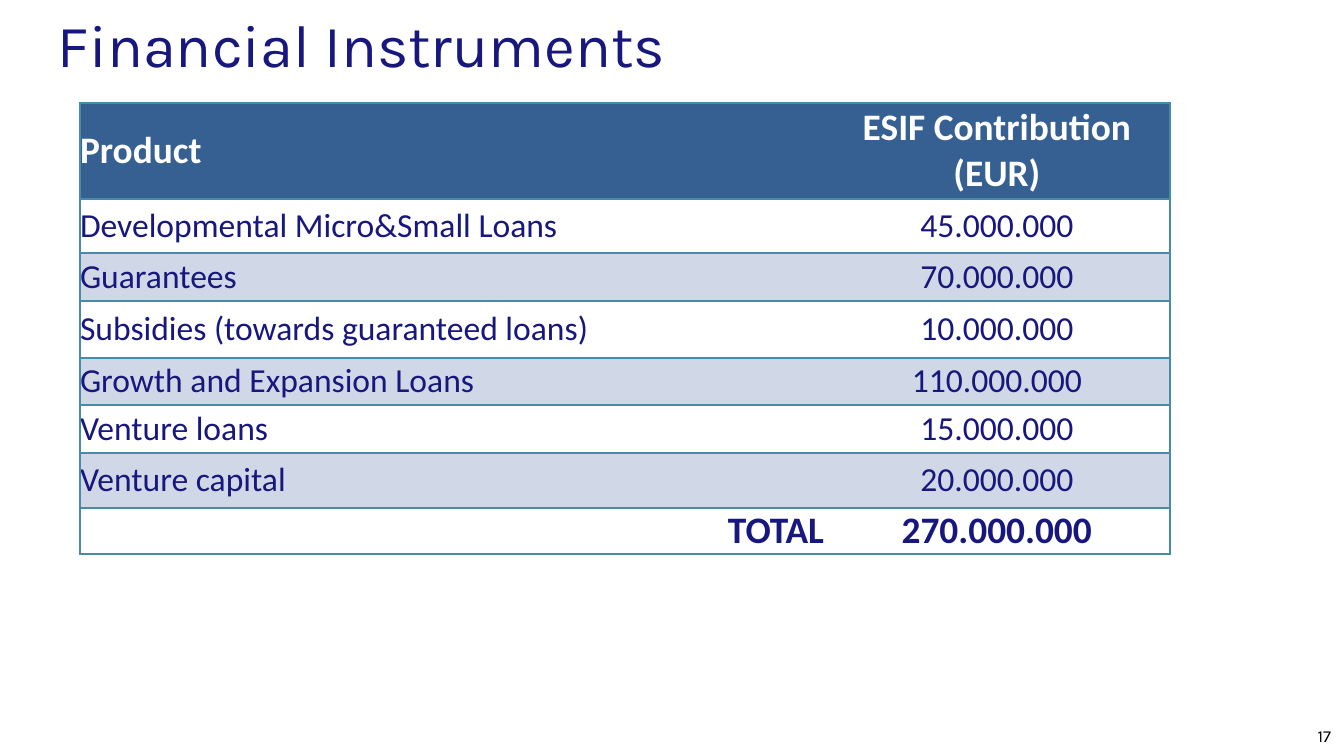
from lxml.etree import SubElement
from pptx import Presentation
from pptx.dml.color import RGBColor
from pptx.enum.text import MSO_ANCHOR as Anchor, PP_ALIGN as Align
from pptx.oxml.ns import qn
from pptx.util import Pt

SCALE = 914400 / 134.4
NAVY, WHITE, BLACK = "17177D", "FFFFFF", "000000"
HEADER_FILL, BAND_FILL, BORDER = "366091", "D0D8E8", "448CA9"

TITLE = "Financial Instruments"
PAGE_NUMBER = "17"
ROWS = [
    (96, "Product", "ESIF Contribution\n(EUR)"),
    (54, "Developmental Micro&Small Loans", "45.000.000"),
    (48, "Guarantees", "70.000.000"),
    (57, "Subsidies (towards guaranteed loans)", "10.000.000"),
    (47, "Growth and Expansion Loans", "110.000.000"),
    (48, "Venture loans", "15.000.000"),
    (55, "Venture capital", "20.000.000"),
    (46, "TOTAL", "270.000.000"),
]
COLUMN_WIDTHS = [744, 346]
TABLE_LEFT, TABLE_TOP = 80, 103


def px(length):
    return round(length * SCALE)


def box(left, top, width, height):
    return [px(length) for length in (left, top, width, height)]


def color(value):
    return RGBColor.from_string(value)


def write(frame, text, font, size, ink, align, bold=False, anchor=Anchor.TOP):
    """Fill a frame or cell text frame, one paragraph per line."""
    frame.word_wrap = True
    frame.vertical_anchor = anchor
    frame.margin_left = frame.margin_right = frame.margin_top = frame.margin_bottom = 0
    add_lines(frame, text, font, size, ink, align, bold)


def add_lines(frame, text, font, size, ink, align, bold):
    for index, line in enumerate(text.split("\n")):
        paragraph = frame.add_paragraph() if index else frame.paragraphs[0]
        paragraph.alignment = align
        run = paragraph.add_run()
        run.text = line
        run.font.name, run.font.size, run.font.bold = font, Pt(size), bold
        run.font.color.rgb = color(ink)


def set_borders(cell, sides):
    """Draw the named sides and clear the others."""
    properties = cell._tc.get_or_add_tcPr()
    for side in "LRTB":
        line = SubElement(properties, qn(f"a:ln{side}"), w=str(Pt(1)))
        if side in sides:
            fill = SubElement(line, qn("a:solidFill"))
            SubElement(fill, qn("a:srgbClr"), val=BORDER)
        else:
            SubElement(line, qn("a:noFill"))


def add_product_table(slide):
    frame = slide.shapes.add_table(
        len(ROWS), len(COLUMN_WIDTHS),
        *box(TABLE_LEFT, TABLE_TOP, sum(COLUMN_WIDTHS), sum(row[0] for row in ROWS)))
    table = frame.table
    table.first_row = table.horz_banding = False
    for column, width in zip(table.columns, COLUMN_WIDTHS):
        column.width = px(width)

    for index, (height, *texts) in enumerate(ROWS):
        table.rows[index].height = px(height)
        header, total = index == 0, index == len(ROWS) - 1
        bold = header or total
        band = BAND_FILL if index % 2 == 0 else WHITE
        label_align = Align.RIGHT if total else Align.LEFT
        cells = zip(table.rows[index].cells, texts, (label_align, Align.CENTER), ("LTB", "RTB"))
        for cell, text, align, sides in cells:
            cell.margin_left = cell.margin_right = cell.margin_top = cell.margin_bottom = 0
            cell.vertical_anchor = Anchor.MIDDLE
            set_borders(cell, sides)
            cell.fill.solid()
            cell.fill.fore_color.rgb = color(HEADER_FILL if header else band)
            add_lines(cell.text_frame, text, "Calibri", 20 if bold else 18,
                      WHITE if header else NAVY, align, bold)


def main():
    presentation = Presentation()
    presentation.slide_width, presentation.slide_height = px(1344), px(756)
    slide = presentation.slides.add_slide(presentation.slide_layouts[5])

    title = slide.shapes.title
    title.left, title.top, title.width, title.height = box(58, 8, 1191, 126)
    write(title.text_frame, TITLE, "Karla", 32, NAVY, Align.LEFT)

    number = slide.shapes.add_textbox(*box(1017, 726, 314, 30))
    write(number.text_frame, PAGE_NUMBER, "Karla", 9, BLACK, Align.RIGHT)

    add_product_table(slide)
    presentation.save("out.pptx")


if __name__ == "__main__":
    main()
